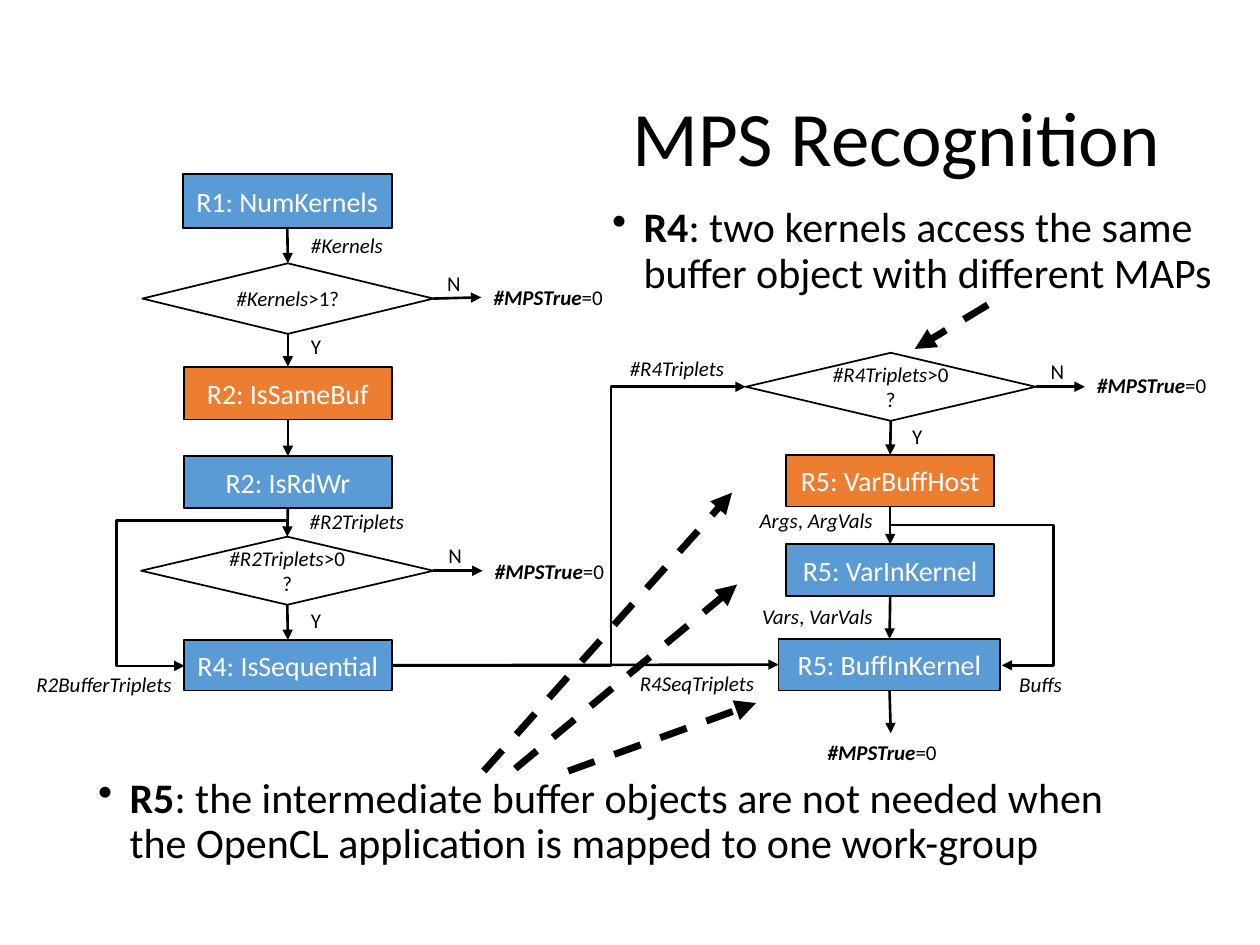
"""Build the MPS Recognition slide with its two linked flowcharts."""
from lxml.etree import SubElement
from pptx import Presentation
from pptx.dml.color import RGBColor
from pptx.enum.dml import MSO_LINE
from pptx.enum.shapes import MSO_CONNECTOR as Link, MSO_SHAPE as Preset
from pptx.enum.text import MSO_ANCHOR as Anchor, MSO_AUTO_SIZE as AutoSize, PP_ALIGN as Align
from pptx.oxml.ns import qn
from pptx.util import Emu, Pt

BLACK = RGBColor(0x00, 0x00, 0x00)
WHITE = RGBColor(0xFF, 0xFF, 0xFF)
BLUE = RGBColor(0x5B, 0x9B, 0xD5)
ORANGE = RGBColor(0xED, 0x7D, 0x31)
FONT = "Calibri"
EMU_PER_PX = 9144
TOP, LEFT, BOTTOM, RIGHT = range(4)

STEPS = {
    "kernels": ("R1: NumKernels", BLUE, (145, 138, 166, 43)),
    "same": ("R2: IsSameBuf", ORANGE, (146, 291, 165, 42)),
    "rdwr": ("R2: IsRdWr", BLUE, (146, 362, 165, 41)),
    "sequential": ("R4: IsSequential", BLUE, (146, 508, 165, 40)),
    "host": ("R5: VarBuffHost", ORANGE, (624, 361, 165, 41)),
    "variable": ("R5: VarInKernel", BLUE, (624, 432, 165, 41)),
    "buffer": ("R5: BuffInKernel", BLUE, (618, 507, 176, 41)),
}
DECISIONS = {
    "kernels?": ("#Kernels", ">1?", (113, 209, 231, 56)),
    "r2?": ("#R2Triplets", ">0?", (112, 426, 232, 54)),
    "r4?": ("#R4Triplets", ">0?", (592, 280, 230, 54)),
}
FLOWS = [
    ("kernels", "kernels?"), ("kernels?", "same"), ("same", "rdwr"), ("rdwr", "r2?"),
    ("r2?", "sequential"), ("r4?", "host"), ("host", "variable"), ("variable", "buffer"),
]
EXITS = [
    ("kernels?", RIGHT, (344, 237), (382, 236)),
    ("r2?", RIGHT, (344, 453), (383, 453)),
    ("r4?", RIGHT, (822, 307), (861, 307)),
    ("buffer", BOTTOM, (706, 548), (707, 582)),
]
RESULTS = [(382, 221), (383, 438), (647, 582), (861, 291)]
ANSWERS = [("Y", 237, 260), ("Y", 237, 477), ("Y", 714, 331),
           ("N", 345, 210), ("N", 346, 426), ("N", 824, 280)]
DATA_LABELS = [
    ("#Kernels", 237, 180, 120), ("#R2Triplets", 236, 399, 109),
    ("R2BufferTriplets", 19, 528, 149), ("#R4Triplets", 490, 277, 116),
    ("R4SeqTriplets", 498, 527, 133), ("Buffs", 799, 528, 161),
]
PAIR_LABELS = [("Args", "ArgVals", 593, 398), ("Vars", "VarVals", 595, 474)]
POINTERS = [
    ((784, 242), (726, 277)), ((384, 612), (581, 391)),
    ((409, 610), (585, 464)), ((451, 612), (600, 558)),
]
NOTES = [
    ("R4", ": two kernels access the same buffer object with different MAPs", (476, 159, 504, 91)),
    ("R5", ": the intermediate buffer objects are not needed when the OpenCL application "
           "is mapped to one work-group", (68, 612, 862, 82)),
]


def px(*lengths):
    """Turn px lengths into EMU."""
    return [Emu(length * EMU_PER_PX) for length in lengths]


def write(shape, runs, size, color=BLACK, align=Align.LEFT, anchor=Anchor.TOP):
    """Write one paragraph of (text, style) runs, where b is bold and i italic."""
    frame = shape.text_frame
    frame.word_wrap = True
    frame.vertical_anchor = anchor
    paragraph = frame.paragraphs[0]
    paragraph.alignment = align
    paragraph.font.name = FONT
    paragraph.font.size = Pt(size)
    paragraph.font.color.rgb = color
    for text, style in runs:
        run = paragraph.add_run()
        run.text = text
        run.font.bold = "b" in style
        run.font.italic = "i" in style
    return paragraph


def add_node(slide, preset, box, fill, runs, size, color):
    """Add an outlined flowchart shape with centred text."""
    shape = slide.shapes.add_shape(preset, *px(*box))
    shape.shadow.inherit = False
    shape.fill.solid()
    shape.fill.fore_color.rgb = fill
    shape.line.color.rgb = BLACK
    shape.line.width = Pt(1)
    write(shape, runs, size, color, Align.CENTER, Anchor.MIDDLE)
    return shape


def add_label(slide, box, runs):
    """Add a small text label that fits its text."""
    label = slide.shapes.add_textbox(*px(*box))
    write(label, runs, 12)
    label.text_frame.auto_size = AutoSize.SHAPE_TO_FIT_TEXT


def add_note(slide, heading, text, box):
    """Add a bulleted note with a bold heading."""
    note = slide.shapes.add_textbox(*px(*box))
    paragraph = write(note, [(heading, "b"), (text, "")], 24)
    paragraph.line_spacing = 0.9
    paragraph.space_before = Pt(10)
    properties = paragraph._p.get_or_add_pPr()
    indent = px(25)[0]
    properties.set("marL", str(indent))
    properties.set("indent", str(-indent))
    bullet = properties.makeelement(qn("a:buChar"), {"char": "•"})
    properties.find(qn("a:defRPr")).addprevious(bullet)


def add_title(slide, text):
    """Add the right-aligned title."""
    title = slide.shapes.add_textbox(*px(69, 40, 862, 145))
    paragraph = write(title, [(text, "")], 44, align=Align.RIGHT, anchor=Anchor.MIDDLE)
    paragraph.line_spacing = 0.9


def add_arrow(slide, start, end, kind=Link.STRAIGHT, width=1.5):
    """Add a black connector with an arrowhead at its end."""
    arrow = slide.shapes.add_connector(kind, *px(*start, *end))
    arrow.line.color.rgb = BLACK
    arrow.line.width = Pt(width)
    SubElement(arrow.line._get_or_add_ln(), qn("a:tailEnd"), type="triangle")
    SubElement(arrow._element.spPr, qn("a:effectLst"))
    return arrow


def add_flow(slide, source, source_side, target, target_side):
    """Join two nodes with a straight arrow."""
    arrow = add_arrow(slide, (0, 0), (1, 1))
    arrow.begin_connect(source, source_side)
    arrow.end_connect(target, target_side)


def add_elbow(slide, start, end, adjustments, rotation=0):
    """Add a bent arrow, with its ends given before rotation."""
    properties = add_arrow(slide, start, end, Link.ELBOW)._element.spPr
    properties.find(qn("a:xfrm")).set("rot", str(rotation * 60000))
    geometry = properties.find(qn("a:prstGeom"))
    geometry.set("prst", f"bentConnector{len(adjustments) + 2}")
    guides = geometry.find(qn("a:avLst"))
    for number, percent in enumerate(adjustments, 1):
        SubElement(guides, qn("a:gd"), name=f"adj{number}", fmla=f"val {round(percent * 1000)}")


def add_pointer(slide, start, end):
    """Add a thick dashed arrow from a note."""
    add_arrow(slide, start, end, width=4).line.dash_style = MSO_LINE.DASH


def main():
    """Build and save the slide."""
    presentation = Presentation()
    presentation.slide_width, presentation.slide_height = px(1000, 750)
    slide = presentation.slides.add_slide(presentation.slide_layouts[6])
    add_title(slide, "MPS Recognition")
    for note in NOTES:
        add_note(slide, *note)
    nodes = {}
    for name, (text, fill, box) in STEPS.items():
        nodes[name] = add_node(slide, Preset.RECTANGLE, box, fill, [(text, "")], 16, WHITE)
    for name, (value, test, box) in DECISIONS.items():
        runs = [(value, "i"), (test, "")]
        nodes[name] = add_node(slide, Preset.FLOWCHART_DECISION, box, WHITE, runs, 12, BLACK)
    for source, target in FLOWS:
        add_flow(slide, nodes[source], BOTTOM, nodes[target], TOP)
    add_flow(slide, nodes["sequential"], RIGHT, nodes["buffer"], LEFT)
    for name, side, start, end in EXITS:
        add_arrow(slide, start, end).begin_connect(nodes[name], side)
    add_elbow(slide, (311, 528), (592, 307), [61.9])
    add_elbow(slide, (130, 430), (245, 512), [-0.5, 165.8], 90)
    add_elbow(slide, (807, 428), (695, 516), [0.7, 146.6], 270)
    for left, top in RESULTS:
        add_label(slide, (left, top, 118, 30), [("#MPSTrue", "bi"), ("=0", "")])
    for text, left, top in ANSWERS:
        add_label(slide, (left, top, 47, 30), [(text, "")])
    for text, left, top, width in DATA_LABELS:
        add_label(slide, (left, top, width, 30), [(text, "i")])
    for first, second, left, top in PAIR_LABELS:
        add_label(slide, (left, top, 161, 30), [(first, "i"), (", ", ""), (second, "i")])
    for start, end in POINTERS:
        add_pointer(slide, start, end)
    presentation.save("out.pptx")


if __name__ == "__main__":
    main()
